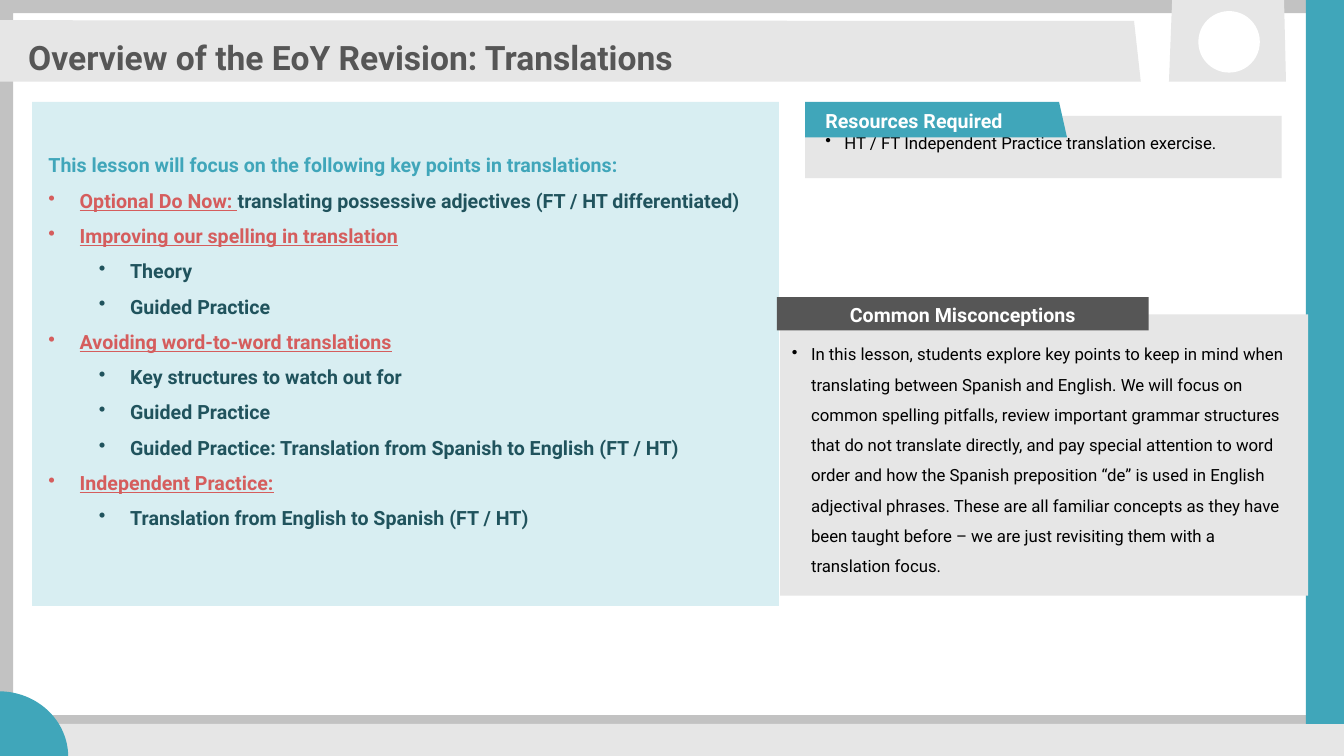
from dataclasses import dataclass

import pptx
import pptx.dml.color
import pptx.enum.shapes
import pptx.enum.text
import pptx.oxml
import pptx.oxml.ns
import pptx.util

Cm = pptx.util.Cm
SHAPE = pptx.enum.shapes.MSO_SHAPE
ALIGN = pptx.enum.text.PP_ALIGN
ANCHOR = pptx.enum.text.MSO_ANCHOR
AUTO_SIZE = pptx.enum.text.MSO_AUTO_SIZE
WIDTH, HEIGHT = 33.87, 19.05


@dataclass(frozen=True)
class Theme:
    font: str = "Roboto"
    title_size: int = 24
    heading_size: int = 14
    body_size: int = 12
    border: str = "C2C2C2"
    panel: str = "E6E6E6"
    teal: str = "40A6BA"
    pale_teal: str = "D8EEF2"
    deep_teal: str = "20535D"
    coral: str = "D55D5D"
    charcoal: str = "565656"
    white: str = "FFFFFF"
    black: str = "000000"


THEME = Theme()

LESSON_INTRO = "This lesson will focus on the following key points in translations:"
LESSON_POINTS = [
    ("Optional Do Now: ", "translating possessive adjectives (FT / HT differentiated)", []),
    ("Improving our spelling in translation", "", ["Theory", "Guided Practice"]),
    ("Avoiding word-to-word translations", "", [
        "Key structures to watch out for",
        "Guided Practice",
        "Guided Practice: Translation from Spanish to English (FT / HT)",
    ]),
    ("Independent Practice:", "", ["Translation from English to Spanish (FT / HT)"]),
]
RESOURCE = "HT / FT Independent Practice translation exercise."
MISCONCEPTION = (
    "In this lesson, students explore key points to keep in mind when translating "
    "between Spanish and English. We will focus on common spelling pitfalls, review "
    "important grammar structures that do not translate directly, and pay special "
    "attention to word order and how the Spanish preposition “de” is used in English "
    "adjectival phrases. These are all familiar concepts as they have been taught "
    "before – we are just revisiting them with a translation focus."
)


def rgb(color):
    return pptx.dml.color.RGBColor.from_string(color)


def paint(shape, color):
    """Give a shape a flat fill with no outline or shadow."""
    shape.shadow.inherit = False
    shape.fill.solid()
    shape.fill.fore_color.rgb = rgb(color)
    shape.line.fill.background()
    return shape


def add_block(slide, kind, box, color):
    return paint(slide.shapes.add_shape(kind, *map(Cm, box)), color)


def add_polygon(slide, points, color):
    start, *rest = [(Cm(x), Cm(y)) for x, y in points]
    builder = slide.shapes.build_freeform(*start)
    builder.add_line_segments(rest, close=True)
    return paint(builder.convert_to_shape(), color)


def prepare_text(shape, margins, anchor=ANCHOR.TOP, auto_size=AUTO_SIZE.NONE):
    """Set margins in the order left, top, right, bottom."""
    frame = shape.text_frame
    frame.word_wrap = True
    frame.auto_size = auto_size
    frame.vertical_anchor = anchor
    (frame.margin_left, frame.margin_top,
     frame.margin_right, frame.margin_bottom) = map(Cm, margins)
    return frame


def add_run(paragraph, text, size, color, bold=False, underline=False):
    run = paragraph.add_run()
    run.text = text
    font = run.font
    font.name, font.size, font.bold = THEME.font, pptx.util.Pt(size), bold
    font.underline = underline
    font.color.rgb = rgb(color)


def make_bullet(paragraph, indent, hanging):
    properties = paragraph._p.get_or_add_pPr()
    properties.set("marL", str(Cm(indent)))
    properties.set("indent", str(-Cm(hanging)))
    bullet = pptx.oxml.parse_xml(
        f'<a:buChar {pptx.oxml.ns.nsdecls("a")} char="•"/>')
    properties.append(bullet)


def style_paragraph(paragraph, spacing=1.0, align=ALIGN.LEFT):
    paragraph.alignment = align
    paragraph.line_spacing = spacing
    return paragraph


def add_heading(shape, text, margins, align):
    frame = prepare_text(shape, margins, ANCHOR.MIDDLE)
    heading = style_paragraph(frame.paragraphs[0], pptx.util.Pt(18), align)
    add_run(heading, text, THEME.heading_size, THEME.white, bold=True)


def add_note(slide, box, text, margins, anchor, spacing):
    """Add a grey panel holding one bulleted paragraph."""
    panel = add_block(slide, SHAPE.RECTANGLE, box, THEME.panel)
    frame = prepare_text(panel, margins, anchor, AUTO_SIZE.SHAPE_TO_FIT_TEXT)
    note = style_paragraph(frame.paragraphs[0], spacing)
    make_bullet(note, 0.48, 0.48)
    add_run(note, text, THEME.body_size, THEME.black)
    return note


def draw_backdrop(slide, width, height):
    edge, footer_height, side_width = 0.33, 0.81, 0.96
    footer_top = height - footer_height
    border = add_block(slide, SHAPE.FRAME, (0, 0, width, height), THEME.border)
    border.adjustments[0] = edge / height

    rule = slide.shapes.add_connector(
        pptx.enum.shapes.MSO_CONNECTOR.STRAIGHT,
        Cm(0.18), Cm(footer_top - 0.1), Cm(width), Cm(footer_top - 0.1))
    rule.line.color.rgb = rgb(THEME.border)
    rule.line.width = pptx.util.Pt(7)
    rule._element.spPr.append(
        pptx.oxml.parse_xml(f'<a:effectLst {pptx.oxml.ns.nsdecls("a")}/>'))

    add_block(slide, SHAPE.RECTANGLE,
              (1.09, footer_top, width - 1.09, footer_height), THEME.panel)
    add_block(slide, SHAPE.ARC, (-1.78, height - 1.63, 3.5, 3.3), THEME.teal)
    add_block(slide, SHAPE.RECTANGLE,
              (width - side_width, 0, side_width, footer_top), THEME.teal)


def draw_header(slide, title, bottom):
    add_polygon(slide, [(0, 0.51), (28.58, 0.53), (28.75, bottom), (0, bottom)],
                THEME.panel)
    add_polygon(slide, [(29.54, 0), (32.36, 0), (32.41, bottom), (29.46, bottom)],
                THEME.panel)
    add_block(slide, SHAPE.OVAL, (30.2, 0.28, 1.55, 1.55), THEME.white)

    heading = slide.shapes.title
    heading.left, heading.top, heading.width, heading.height = map(
        Cm, (0.46, 0.56, 28.24, 1.75))
    frame = prepare_text(heading, (0.25, 0.13, 0.25, 0.13), ANCHOR.MIDDLE)
    add_run(style_paragraph(frame.paragraphs[0]), title,
            THEME.title_size, THEME.charcoal, bold=True)
    slide.shapes._spTree.append(heading._element)  # in front of the header bar


def draw_resources(slide, left, top, width):
    note = add_note(slide, (left, top + 0.35, width, 1.57), RESOURCE,
                    (0.51, 0.71, 0.51, 0.36), ANCHOR.TOP, 1.0)
    note.space_after = pptx.util.Pt(6)
    tab_width, tab_height, slant = 6.6, 0.89, 0.2
    tab = add_polygon(slide, [
        (left, top), (left + tab_width - slant, top),
        (left + tab_width, top + tab_height), (left, top + tab_height),
    ], THEME.teal)
    add_heading(tab, "Resources Required", (0.51, 0.13, 0.25, 0.13), ALIGN.LEFT)


def draw_lesson(slide, box):
    panel = add_block(slide, SHAPE.RECTANGLE, box, THEME.pale_teal)
    frame = prepare_text(panel, (0.41, 1, 0.41, 1),
                         auto_size=AUTO_SIZE.SHAPE_TO_FIT_TEXT)
    size = THEME.heading_size
    intro = style_paragraph(frame.paragraphs[0], 1.5)
    add_run(intro, LESSON_INTRO, size, THEME.teal, bold=True)

    def add_point(level):
        point = style_paragraph(frame.add_paragraph(), 1.5)
        point.level = level
        make_bullet(point, 0.79 + 1.27 * level, 0.79)
        return point

    for topic, detail, steps in LESSON_POINTS:
        point = add_point(0)
        add_run(point, topic, size, THEME.coral, bold=True, underline=True)
        if detail:
            add_run(point, detail, size, THEME.deep_teal, bold=True)
        for step in steps:
            add_run(add_point(1), step, size, THEME.deep_teal, bold=True)


def draw_misconceptions(slide, left, top, width):
    add_note(slide, (left + 0.08, top + 0.43, width, 7.09), MISCONCEPTION,
             (0.3, 0.51, 0.3, 0.51), ANCHOR.MIDDLE, 1.5)
    label = add_block(slide, SHAPE.RECTANGLE, (left, top, 9.37, 0.84), THEME.charcoal)
    add_heading(label, "Common Misconceptions", (0.25, 0.13, 0.25, 0.13), ALIGN.CENTER)


def main():
    deck = pptx.Presentation()
    deck.slide_width, deck.slide_height = Cm(WIDTH), Cm(HEIGHT)
    slide = deck.slides.add_slide(deck.slide_layouts.get_by_name("Title Only"))
    draw_backdrop(slide, WIDTH, HEIGHT)
    draw_header(slide, "Overview of the EoY Revision: Translations", 2.06)
    draw_resources(slide, 20.29, 2.57, 12.01)
    draw_lesson(slide, (0.81, 2.57, 18.82, 12.7))
    draw_misconceptions(slide, 19.58, 7.49, 13.31)
    deck.save("out.pptx")


if __name__ == "__main__":
    main()
